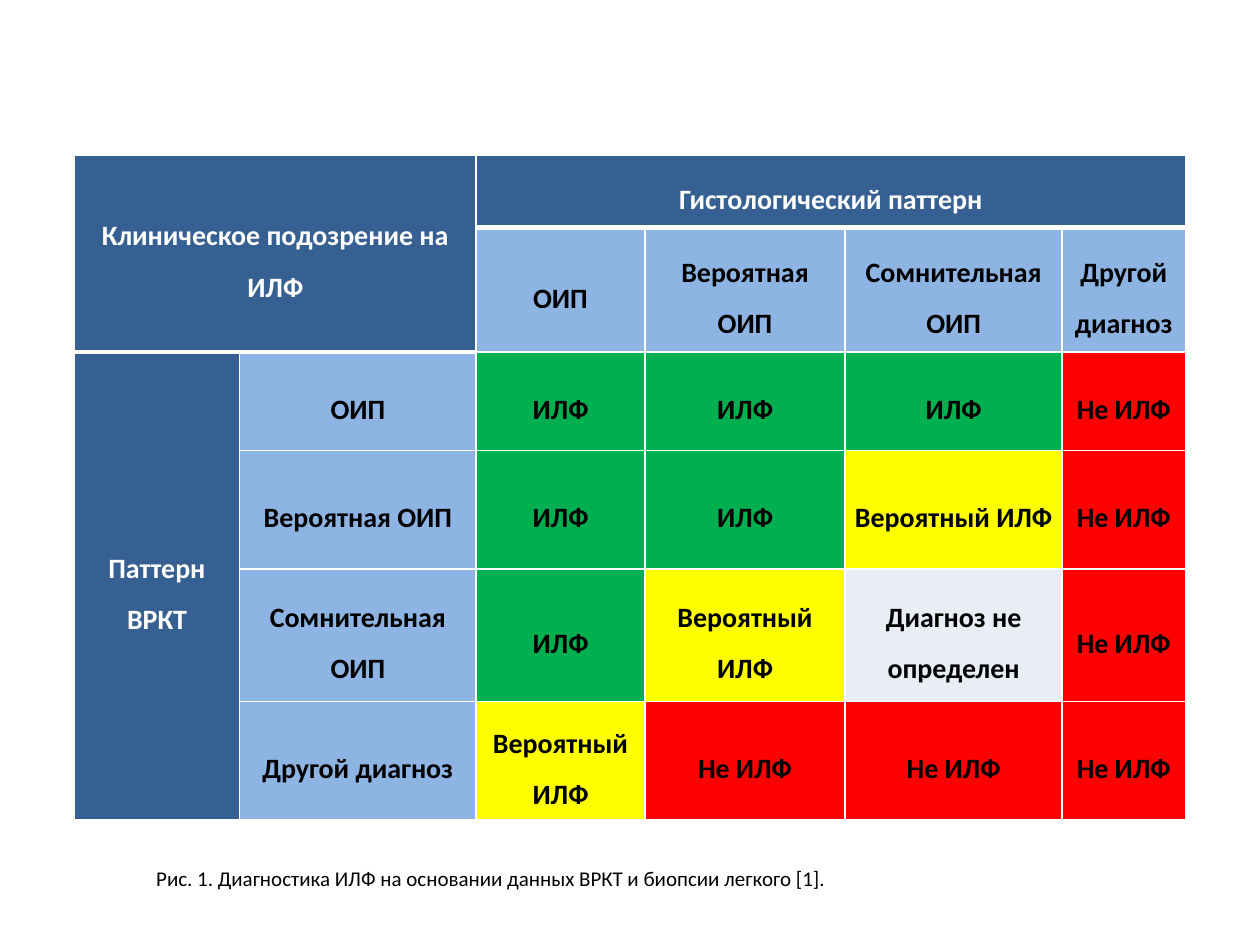
from dataclasses import dataclass

from lxml.etree import SubElement
from pptx import Presentation
from pptx.dml.color import RGBColor
from pptx.enum.text import MSO_ANCHOR, MSO_AUTO_SIZE, PP_ALIGN
from pptx.oxml.ns import qn
from pptx.table import Table, _Cell
from pptx.text.text import _Paragraph
from pptx.util import Cm, Pt

NAVY, BLUE, WHITE, BLACK = "376092", "8EB4E3", "FFFFFF", "000000"
FILLS = {
    "ИЛФ": "00B050",
    "Вероятный ИЛФ": "FFFF00",
    "Диагноз не определен": "E9EDF4",
    "Не ИЛФ": "FF0000",
}
SURE, LIKELY, OPEN, NOT = FILLS
LABELS = ["ОИП", "Вероятная ОИП", "Сомнительная ОИП", "Другой диагноз"]
RESULTS = [
    [SURE, SURE, SURE, NOT],
    [SURE, SURE, LIKELY, NOT],
    [SURE, LIKELY, OPEN, NOT],
    [LIKELY, NOT, NOT, NOT],
]
WIDTHS = [3.33, 4.77, 3.4, 4.04, 4.37, 2.49]
HEIGHTS = [1.47, 2.51, 1.98, 2.39, 2.67, 2.39]


@dataclass
class Item:
    row: int
    col: int
    text: str
    fill: str
    ink: str = BLACK
    rows: int = 1
    cols: int = 1


def paint(code: str) -> RGBColor:
    return RGBColor.from_string(code)


def write(para: _Paragraph, text: str, size: int, ink: str, bold: bool) -> None:
    run = para.add_run()
    run.text = text
    run.font.name = "Calibri"
    run.font.size = Pt(size)
    run.font.bold = bold
    run.font.color.rgb = paint(ink)


def edge(cell: _Cell, thick: str) -> None:
    """Draw white borders, with a heavy one on the sides named in thick."""
    props = cell._tc.get_or_add_tcPr()
    for side in "LRTB":
        width = Pt(3 if side in thick else 1)
        line = SubElement(props, qn(f"a:ln{side}"), w=str(width))
        fill = SubElement(line, qn("a:solidFill"))
        SubElement(fill, qn("a:srgbClr"), val=WHITE)


def place(table: Table, item: Item) -> None:
    last = item.row + item.rows - 1
    end = item.col + item.cols - 1
    cell = table.cell(item.row, item.col)
    if (item.rows, item.cols) != (1, 1):
        cell.merge(table.cell(last, end))
    # The heavy rule runs below each dark header
    base = 1 if item.col < 2 else 0
    thick = ("B" if last == base else "") + ("T" if item.row == base + 1 else "")
    for row in range(item.row, last + 1):
        for col in range(item.col, end + 1):
            part = table.cell(row, col)
            edge(part, thick)
            part.fill.solid()
            part.fill.fore_color.rgb = paint(item.fill)
    cell.vertical_anchor = MSO_ANCHOR.MIDDLE
    cell.margin_left = cell.margin_right = Cm(0.19)
    cell.margin_top = cell.margin_bottom = Cm(0)
    para = cell.text_frame.paragraphs[0]
    para.alignment = PP_ALIGN.CENTER
    para.line_spacing = 1.5
    write(para, item.text, 16, item.ink, True)


def main() -> None:
    deck = Presentation()
    deck.slide_width, deck.slide_height = Cm(25.4), Cm(19.05)
    slide = deck.slides.add_slide(deck.slide_layouts[6])

    frame = slide.shapes.add_table(
        len(HEIGHTS), len(WIDTHS), Cm(1.5), Cm(3.12), Cm(sum(WIDTHS)), Cm(sum(HEIGHTS))
    )
    table = frame.table
    for column, width in zip(table.columns, WIDTHS):
        column.width = Cm(width)
    for row, height in zip(table.rows, HEIGHTS):
        row.height = Cm(height)

    items = [
        Item(0, 0, "Клиническое подозрение на ИЛФ", NAVY, WHITE, 2, 2),
        Item(0, 2, "Гистологический паттерн", NAVY, WHITE, 1, 4),
        Item(2, 0, "Паттерн ВРКТ", NAVY, WHITE, 4, 1),
    ]
    for pos, (label, line) in enumerate(zip(LABELS, RESULTS), 2):
        items.append(Item(1, pos, label, BLUE))
        items.append(Item(pos, 1, label, BLUE))
        items += [Item(pos, col, text, FILLS[text]) for col, text in enumerate(line, 2)]
    for item in items:
        place(table, item)

    note = slide.shapes.add_textbox(Cm(2.9), Cm(17.32), Cm(14.17), Cm(0.77)).text_frame
    note.word_wrap = False
    note.auto_size = MSO_AUTO_SIZE.SHAPE_TO_FIT_TEXT
    text = "Рис. 1. Диагностика ИЛФ на основании данных ВРКТ и биопсии легкого [1]."
    write(note.paragraphs[0], text, 12, BLACK, False)

    deck.save("out.pptx")


if __name__ == "__main__":
    main()
